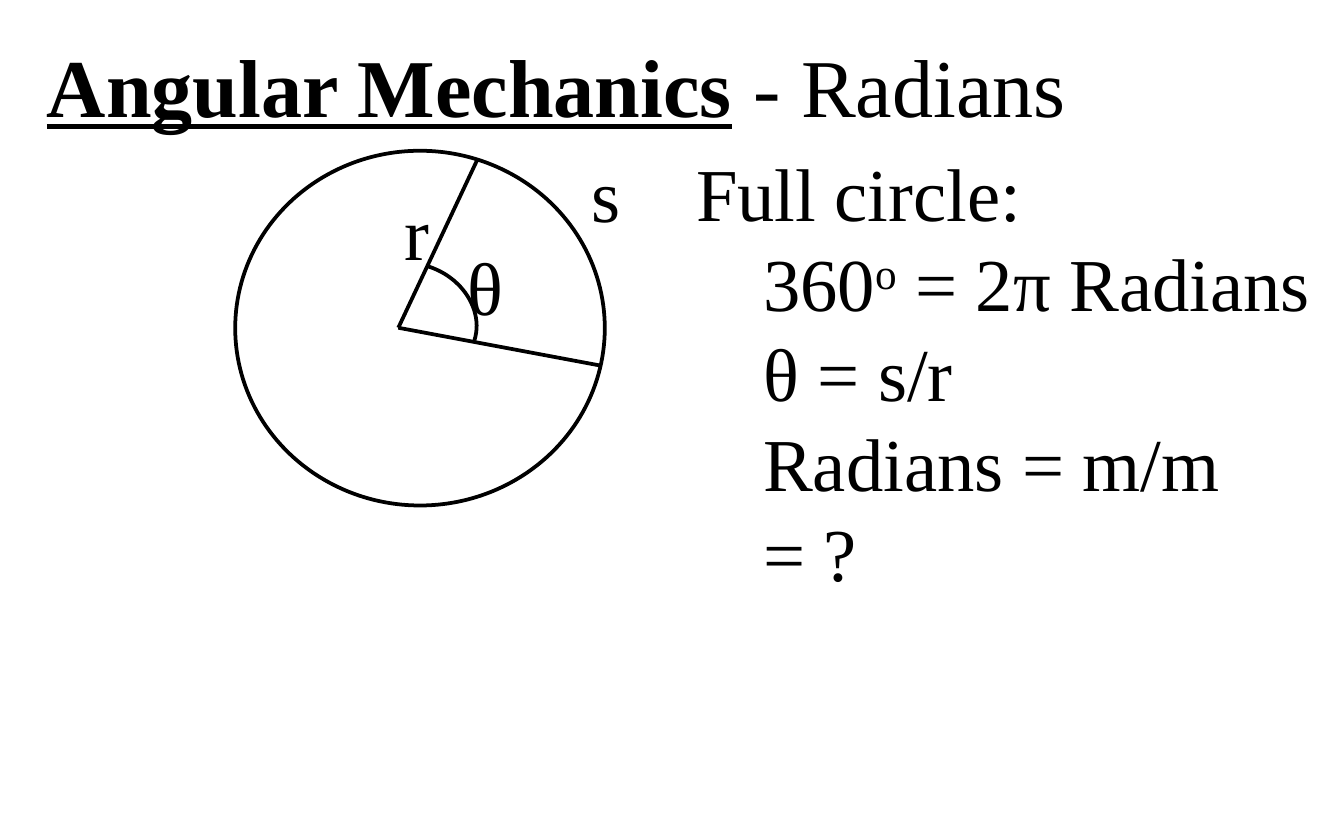
from dataclasses import dataclass

from lxml import etree
from pptx import Presentation
from pptx import util as u
from pptx.dml import color
from pptx.enum import shapes, text
from pptx.oxml import ns


@dataclass(frozen=True)
class Theme:
    font: str = "Times New Roman"
    ink: color.RGBColor = color.RGBColor(0, 0, 0)
    paper: color.RGBColor = color.RGBColor(255, 255, 255)
    title: int = 44
    body: int = 40
    stroke: int = 2
    leading: float = 1.205


theme = Theme()
deck = Presentation()
deck.slide_width, deck.slide_height = u.Pt(720), u.Pt(450)
page = deck.slides.add_slide(deck.slide_layouts[6])


def add_text(left, top, width, height, size, paragraphs, wrap=False):
    """Each paragraph is (indent, runs); each run is (wording, bold, baseline)."""
    box = page.shapes.add_textbox(u.Pt(left), u.Pt(top), u.Pt(width), u.Pt(height))
    frame = box.text_frame
    frame.word_wrap = wrap
    frame.vertical_anchor = text.MSO_ANCHOR.TOP
    for index, (indent, runs) in enumerate(paragraphs):
        para = frame.add_paragraph() if index else frame.paragraphs[0]
        para.line_spacing = u.Pt(round(size * theme.leading, 1))
        if indent:
            properties = para._p.get_or_add_pPr()
            properties.set("marL", str(u.Pt(indent)))
            properties.set("indent", "0")
        for wording, heading, baseline in runs:
            span = para.add_run()
            span.text = wording
            span.font.name = theme.font
            span.font.size = u.Pt(size)
            span.font.color.rgb = theme.ink
            span.font.bold = span.font.underline = heading
            if baseline:
                span.font._element.set("baseline", str(baseline * 1000))


def set_line(shape):
    shape.line.color.rgb = theme.ink
    shape.line.width = u.Pt(theme.stroke)


# Title
add_text(18, 15.1, 565, 60.5, theme.title,
         [(0, [("Angular Mechanics", True, 0), (" - Radians", False, 0)])])

# Circle
circle = page.shapes.add_shape(shapes.MSO_SHAPE.OVAL,
                               u.Pt(126), u.Pt(80.8), u.Pt(198), u.Pt(190))
circle.shadow.inherit = False
circle.fill.solid()
circle.fill.fore_color.rgb = theme.paper
set_line(circle)

# Two radii from the centre
centre = (213.4, 175.6)
for rim in [(255.6, 85.8), (321.4, 195.8)]:
    radius = page.shapes.add_connector(shapes.MSO_CONNECTOR.STRAIGHT,
                                       *(u.Pt(value) for value in centre + rim))
    set_line(radius)
    etree.SubElement(radius._element.spPr, ns.qn("a:effectLst"))

# Angle arc, sampled along a cubic curve
controls = [(229, 142.6), (247.7, 148.3), (259.2, 166.3), (254.2, 182.3)]
steps = 24
points = []
for step in range(steps + 1):
    t = step / steps
    weights = [(1 - t) ** 3, 3 * t * (1 - t) ** 2, 3 * t * t * (1 - t), t ** 3]
    points.append(tuple(u.Pt(sum(w * c[axis] for w, c in zip(weights, controls)))
                        for axis in (0, 1)))
builder = page.shapes.build_freeform(*points[0])
builder.add_line_segments(points[1:], close=False)
arc = builder.convert_to_shape()
arc.shadow.inherit = False
arc.fill.background()
set_line(arc)

# Labels of radius, angle and arc length
for label, left, top, width in [("r", 209.5, 95.8, 28), ("θ", 243.4, 125.3, 35),
                                ("s", 309.6, 75.6, 30)]:
    add_text(left, top, width, 55.4, theme.body, [(0, [(label, False, 0)])])

# Formulas
add_text(365.8, 74.9, 350.6, 201, theme.body, [
    (0, [("Full circle:", False, 0)]),
    (36, [("360", False, 0), ("o", False, 30), (" = 2π Radians", False, 0)]),
    (36, [("θ = s/r", False, 0)]),
    (36, [("Radians = m/m = ?", False, 0)]),
], wrap=True)

deck.save("out.pptx")
